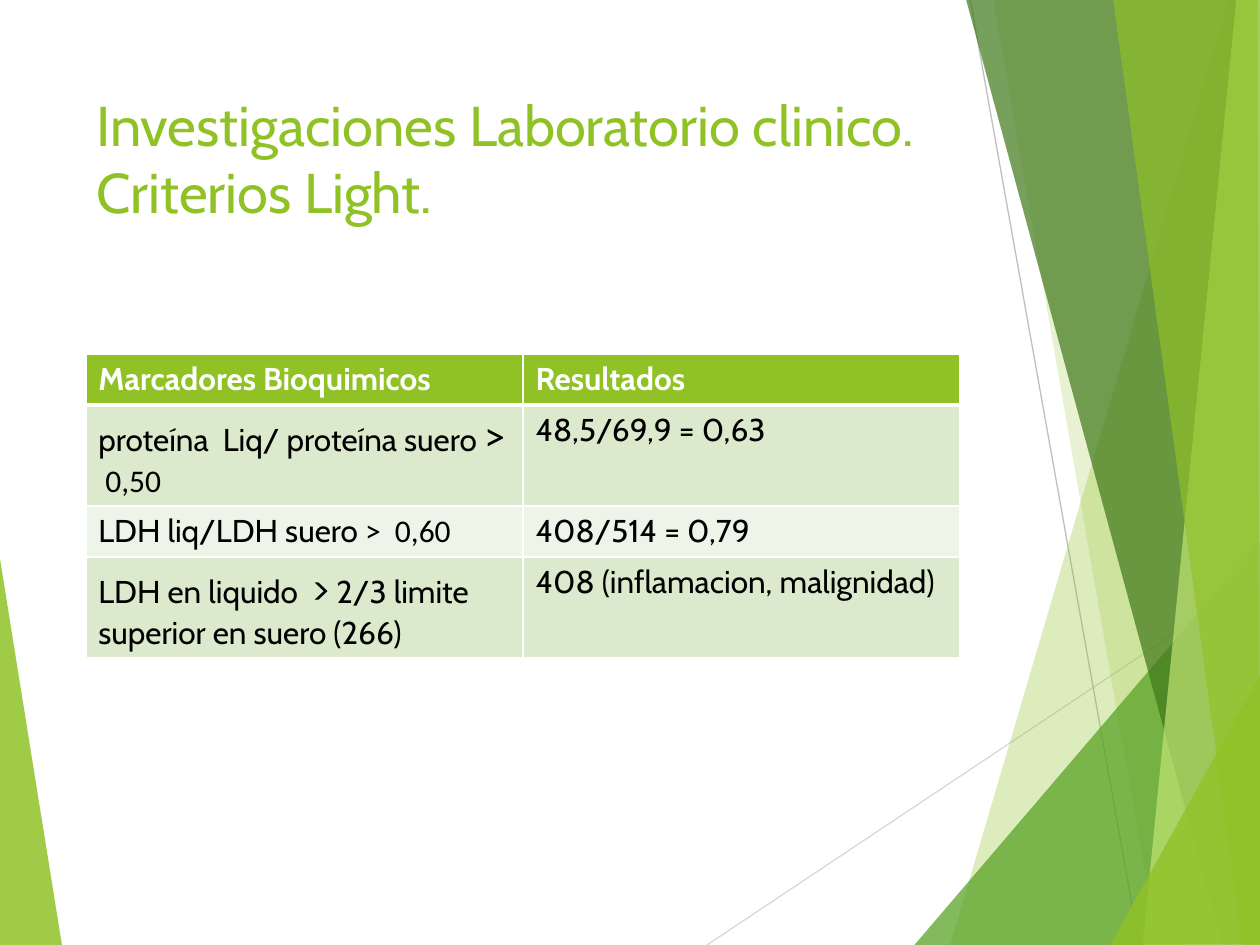
from lxml import etree
from pptx import Presentation
from pptx.dml.color import RGBColor
from pptx.enum.shapes import MSO_CONNECTOR
from pptx.enum.text import MSO_ANCHOR
from pptx.oxml.ns import qn
from pptx.util import Pt

STRAIGHT = MSO_CONNECTOR.STRAIGHT
TOP = MSO_ANCHOR.TOP
COLORS = {
    "lime": "90C226",
    "green": "54A021",
    "forest": "3F7819",
    "pale": "C0E474",
    "light_gray": "D9D9D9",
    "gray": "BFBFBF",
    "band_dark": "DBE9CD",
    "band_light": "EEF4E8",
    "white": "FFFFFF",
    "black": "000000",
}
BACK_FACETS = [
    ("lime", 85, [(-0.5, 316), (35.5, 540.5), (-0.5, 540)]),
]
LINES = [
    ("light_gray", (404, 540), (720.5, 329)),
    ("gray", (554.5, 0), (651, 540)),
]
FRONT_FACETS = [
    ("lime", 30, [(702, 0), (543, 540), (721, 540.5), (720.5, 0.5)]),
    ("lime", 20, [(567.5, -0.5), (661.5, 540), (720.5, 540), (720.5, -0.5)]),
    ("green", 72, [(522.5, 540), (720, 309), (720.5, 540)]),
    ("forest", 70, [(552, -0.5), (698.5, 540), (720.5, 539.5), (720.5, -0.5)]),
    ("pale", 70, [(706.5, -0.5), (653, 540), (720.5, 540), (720, -0.5)]),
    ("lime", 65, [(636, -0.5), (710, 540), (720, 540), (718.5, -0.5)]),
    ("lime", 80, [(634.5, 540), (720.5, 385), (720.5, 539.5)]),
]
HEADERS = ["Marcadores Bioquimicos", "Resultados"]
ROWS = [
    (
        [
            ("proteína  Liq/ proteína suero ", {}),
            ("˃", {"font": "Calibri", "size": 24}),
            ("  0,50", {"font": "Calibri"}),
        ],
        "48,5/69,9 = 0,63",
    ),
    (
        [("LDH liq/LDH suero ", {}), ("˃  0,60", {"font": "Calibri"})],
        "408/514 = 0,79",
    ),
    (
        [
            ("LDH en liquido  ", {}),
            (">", {"size": 24}),
            (" 2/3 limite superior en suero (266)", {}),
        ],
        "408 (inflamacion, malignidad)",
    ),
]


def rgb(name):
    """Return the named colour."""
    return RGBColor.from_string(COLORS[name])


def add_text(paragraph, text, font="Cabin", size=18, color="black", bold=False):
    """Append a formatted run to a paragraph."""
    run = paragraph.add_run()
    run.text = text
    run.font.name = font
    run.font.size = Pt(size)
    run.font.bold = bold
    run.font.color.rgb = rgb(color)


def add_facet(slide, color, opacity, points):
    """Draw a translucent polygon."""
    corners = [(Pt(x), Pt(y)) for x, y in points]
    builder = slide.shapes.build_freeform(*corners[0])
    builder.add_line_segments(corners[1:], close=True)
    shape = builder.convert_to_shape()
    shape.shadow.inherit = False
    shape.line.fill.background()
    shape.fill.solid()
    shape.fill.fore_color.rgb = rgb(color)
    color_element = shape.element.spPr.find(".//" + qn("a:srgbClr"))
    etree.SubElement(color_element, qn("a:alpha"), val=str(opacity * 1000))


def add_line(slide, color, start, end):
    """Draw a thin straight line."""
    ends = [Pt(value) for value in start + end]
    connector = slide.shapes.add_connector(STRAIGHT, *ends)
    connector.line.color.rgb = rgb(color)
    connector.line.width = Pt(0.75)
    etree.SubElement(connector.element.spPr, qn("a:effectLst"))


def add_title(slide, text):
    """Place the slide title."""
    box = slide.shapes.add_textbox(Pt(48), Pt(48), Pt(500), Pt(104))
    frame = box.text_frame
    frame.word_wrap = True
    frame.vertical_anchor = TOP
    add_text(frame.paragraphs[0], text, size=32, color="lime")


def set_borders(cell, top=1, bottom=1):
    """Give a cell white borders of the given top and bottom widths."""
    properties = cell._tc.get_or_add_tcPr()
    widths = {"lnL": 1, "lnR": 1, "lnT": top, "lnB": bottom}
    for index, (side, width) in enumerate(widths.items()):
        line = etree.Element(qn("a:" + side), w=str(Pt(width)))
        fill = etree.SubElement(line, qn("a:solidFill"))
        etree.SubElement(fill, qn("a:srgbClr"), val=COLORS["white"])
        properties.insert(index, line)


def fill_cell(cell, runs, fill, top=1, bottom=1, **text_format):
    """Write runs into a cell and set its fill and borders."""
    cell.fill.solid()
    cell.fill.fore_color.rgb = rgb(fill)
    set_borders(cell, top, bottom)
    for text, run_format in runs:
        add_text(cell.text_frame.paragraphs[0], text, **text_format, **run_format)


def add_results_table(slide):
    """Build the table of markers and results."""
    frame = slide.shapes.add_table(
        len(ROWS) + 1, len(HEADERS), Pt(49), Pt(202.3), Pt(499.6), Pt(116.8)
    )
    table = frame.table
    for column, header in enumerate(HEADERS):
        fill_cell(table.cell(0, column), [(header, {})], "lime",
                  bottom=3, color="white", bold=True)
    for index, (marker, result) in enumerate(ROWS, start=1):
        band = "band_dark" if index % 2 else "band_light"
        top = 3 if index == 1 else 1
        fill_cell(table.cell(index, 0), marker, band, top=top)
        fill_cell(table.cell(index, 1), [(result, {})], band, top=top)


def main():
    """Build and save the presentation."""
    presentation = Presentation()
    presentation.slide_width, presentation.slide_height = Pt(720), Pt(540)
    slide = presentation.slides.add_slide(presentation.slide_layouts[6])
    for facet in BACK_FACETS:
        add_facet(slide, *facet)
    for line in LINES:
        add_line(slide, *line)
    for facet in FRONT_FACETS:
        add_facet(slide, *facet)
    add_title(slide, "Investigaciones Laboratorio clinico. Criterios Light.")
    add_results_table(slide)
    presentation.save("out.pptx")


if __name__ == "__main__":
    main()
